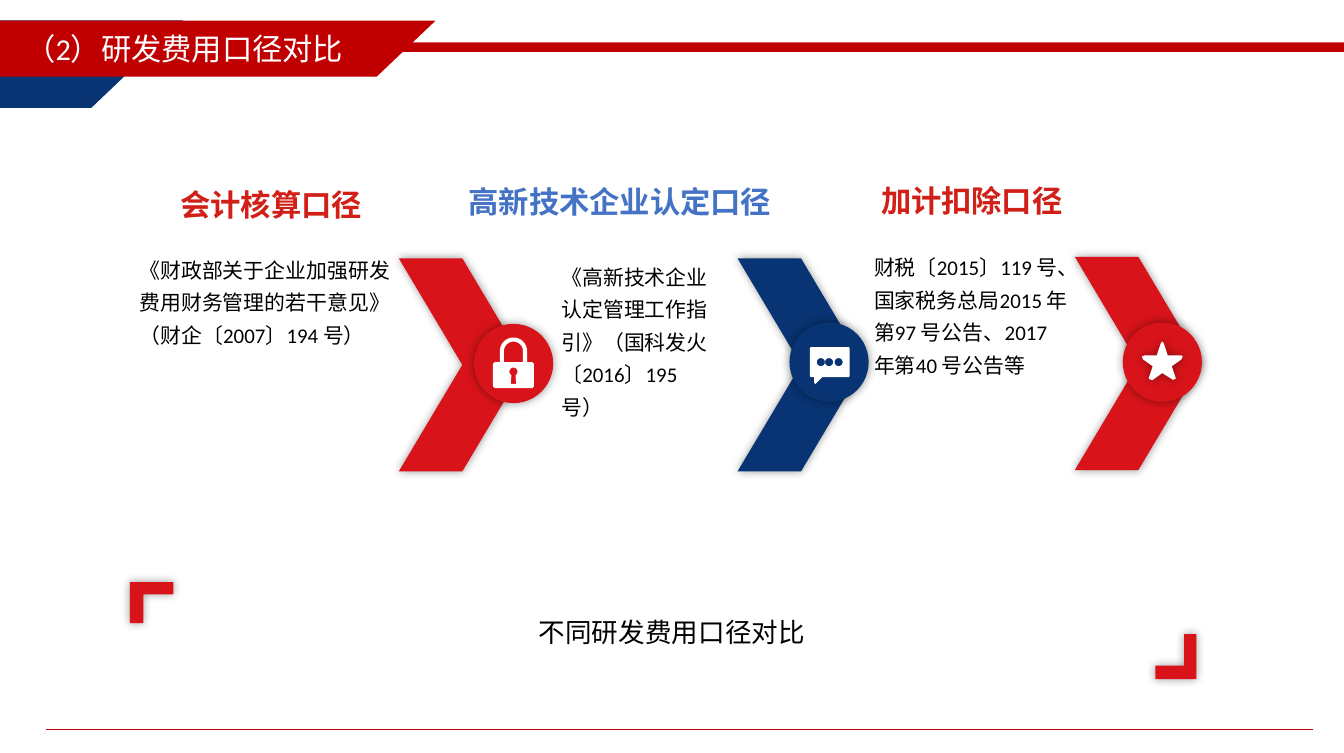
from math import cos, radians, sin

from lxml import etree
from pptx import Presentation
from pptx.dml.color import RGBColor
from pptx.enum.shapes import MSO_CONNECTOR, MSO_SHAPE
from pptx.enum.text import MSO_ANCHOR, MSO_AUTO_SIZE, PP_ALIGN
from pptx.oxml.ns import qn
from pptx.util import Emu, Pt

SLANT = MSO_SHAPE.PARALLELOGRAM
CHEVRON = MSO_SHAPE.CHEVRON
OVAL = MSO_SHAPE.OVAL
LINE = MSO_CONNECTOR.STRAIGHT
CENTER = PP_ALIGN.CENTER
LEFT = PP_ALIGN.LEFT
MIDDLE = MSO_ANCHOR.MIDDLE
GROW = MSO_AUTO_SIZE.SHAPE_TO_FIT_TEXT
FIXED = MSO_AUTO_SIZE.NONE

SCALE = 9144
LATIN = "Calibri"
HAN = "Noto Sans CJK SC"
RED, NAVY, DARK = "D8141A", "083473", "C00000"
TITLE, BLUE = "D12018", "4472C4"
WHITE, BLACK = "FFFFFF", "000000"


def px(value):
    return Emu(round(value * SCALE))


def color(code):
    return RGBColor.from_string(code)


def paint(shape, fill, glow=False):
    shape.shadow.inherit = False
    shape.fill.solid()
    shape.fill.fore_color.rgb = color(fill)
    shape.line.fill.background()
    if glow:
        effects = shape._element.spPr.find(qn("a:effectLst"))
        shade = etree.SubElement(effects, qn("a:outerShdw"),
                                 blurRad=str(Pt(5)), dist="0", dir="0",
                                 algn="ctr", rotWithShape="0")
        tint = etree.SubElement(shade, qn("a:srgbClr"), val=BLACK)
        etree.SubElement(tint, qn("a:alpha"), val="40000")


def preset(parent, kind, box, fill, glow=False):
    shape = parent.add_shape(kind, *map(px, box))
    paint(shape, fill, glow)
    return shape


def slant(parent, box, fill):
    shape = preset(parent, SLANT, box, fill)
    shape.adjustments[0] = 1.05
    return shape


def outline(parent, paths, fill, glow=False):
    first, *rest = [[(px(x), px(y)) for x, y in path] for path in paths]
    pen = parent.build_freeform(*first[0], scale=1.0)
    pen.add_line_segments(first[1:], close=True)
    for path in rest:
        pen.move_to(*path[0])
        pen.add_line_segments(path[1:], close=True)
    paint(pen.convert_to_shape(), fill, glow)


def write(frame, lines, size, code, font, align, space=None, bold=False):
    frame.text = "\n".join(lines)
    for para in frame.paragraphs:
        para.alignment = align
        if space:
            para.line_spacing = space
        para.font.size = Pt(size)
        para.font.bold = bold
        para.font.color.rgb = color(code)
        para.font.name = font
        props = para._p.pPr.find(qn("a:defRPr"))
        etree.SubElement(props, qn("a:ea"), typeface=HAN)


def label(parent, box, lines, size, code, font, align=LEFT, space=None,
          bold=False, wrap=True, fit=GROW, inset=(7, 4)):
    frame = parent.add_textbox(*map(px, box)).text_frame
    frame.word_wrap = wrap
    frame.auto_size = fit
    frame.margin_left = frame.margin_right = px(inset[0])
    frame.margin_top = frame.margin_bottom = px(inset[1])
    write(frame, lines, size, code, font, align, space, bold)


def arc(x, y, radius, start, end, steps=16):
    turns = [radians(start + (end - start) * i / steps)
             for i in range(steps + 1)]
    return [(x + radius * cos(t), y + radius * sin(t)) for t in turns]


def lock():
    body = (arc(363, 282, 2, 90, 180) + arc(363, 267, 2, 180, 270)
            + [(366, 265)] + arc(376, 257, 10, 180, 360) + [(386, 265)]
            + arc(389, 267, 2, 270, 360) + arc(389, 282, 2, 0, 90))
    gap = arc(376, 257, 7, 180, 360) + [(383, 265), (369, 265)]
    key = arc(376, 272, 3, 120, 420) + [(378, 281), (374, 281)]
    return [body, gap, key]


def bubble():
    body = (arc(594, 275, 1, 90, 180) + arc(594, 255, 1, 180, 270)
            + arc(621, 255, 1, 270, 360) + arc(621, 275, 1, 0, 90)
            + [(602, 276), (598, 280), (597, 281), (596, 280), (596, 276)])
    return [body] + [arc(x, 265, 3, 0, 360) for x in (601, 607, 614)]


def star():
    return [[(865, 263), (858, 268), (861, 277), (859, 278), (851, 273),
             (844, 278), (843, 278), (841, 277), (844, 268), (837, 263),
             (836, 261), (838, 260), (847, 260), (850, 251), (851, 250),
             (852, 251), (855, 260), (865, 260), (866, 261)]]


def badge(parent, left, top, fill, icon, glow=False):
    group = parent.add_group_shape().shapes
    preset(group, OVAL, (left, top, 58, 58), fill, True)
    outline(group, icon, WHITE, glow)


def header(parent):
    slant(parent, (-81, 15, 215, 64), NAVY)
    banner = slant(parent, (-49, 15, 368, 41), DARK)
    banner.text_frame.vertical_anchor = MIDDLE
    write(banner.text_frame, ["（2）研发费用口径对比"], 16, WHITE, LATIN, CENTER)
    slant(parent, (274, 31, 817, 7), DARK)


def rule(parent):
    line = parent.add_connector(LINE, px(34), px(534), px(961), px(534))
    line.line.color.rgb = color(DARK)
    line.line.width = Pt(0.5)
    etree.SubElement(line._element.spPr, qn("a:effectLst"))


def main():
    deck = Presentation()
    deck.slide_width, deck.slide_height = px(984), px(551)
    parent = deck.slides.add_slide(deck.slide_layouts[6]).shapes
    header(parent)
    rule(parent)

    for left, top, fill in ((292, 189, RED), (540, 189, NAVY),
                            (787, 188, RED)):
        preset(parent, CHEVRON, (left, top, 93, 156), fill, True)
    badge(parent, 347, 237, RED, lock())
    badge(parent, 578, 236, NAVY, bubble())
    badge(parent, 822, 236, RED, star(), True)

    for box, text, code in (
            ((124, 132, 149, 34), "会计核算口径", TITLE),
            ((335, 130, 238, 34), "高新技术企业认定口径", BLUE),
            ((637, 129, 149, 34), "加计扣除口径", TITLE)):
        label(parent, box, [text], 16, code, HAN, CENTER, bold=True,
              wrap=False)

    for box, lines, fit in (
            ((95, 179, 212, 80),
             ["《财政部关于企业加强研发费用财务管理的若干意见》",
              "（财企〔2007〕194 号）"], GROW),
            ((404, 184, 124, 124),
             ["《高新技术企业认定管理工作指引》（国科发火〔2016〕195号）"], FIXED),
            ((633, 177, 157, 104),
             ["财税〔2015〕119 号、国家税务总局2015 年第97 号公告、"
              "2017 年第40 号公告等"], GROW)):
        label(parent, box, lines, 11, BLACK, LATIN, space=1.3, fit=fit)

    outline(parent, [[(95, 426), (127, 426), (127, 435), (105, 435),
                      (105, 456), (95, 456)]], RED, True)
    outline(parent, [[(876, 497), (846, 497), (846, 487), (867, 487),
                      (867, 464), (876, 464)]], RED, True)
    label(parent, (132, 439, 720, 40), ["不同研发费用口径对比"], 14, BLACK,
          HAN, CENTER, 1.3, inset=(10, 5))
    deck.save("out.pptx")


if __name__ == "__main__":
    main()
